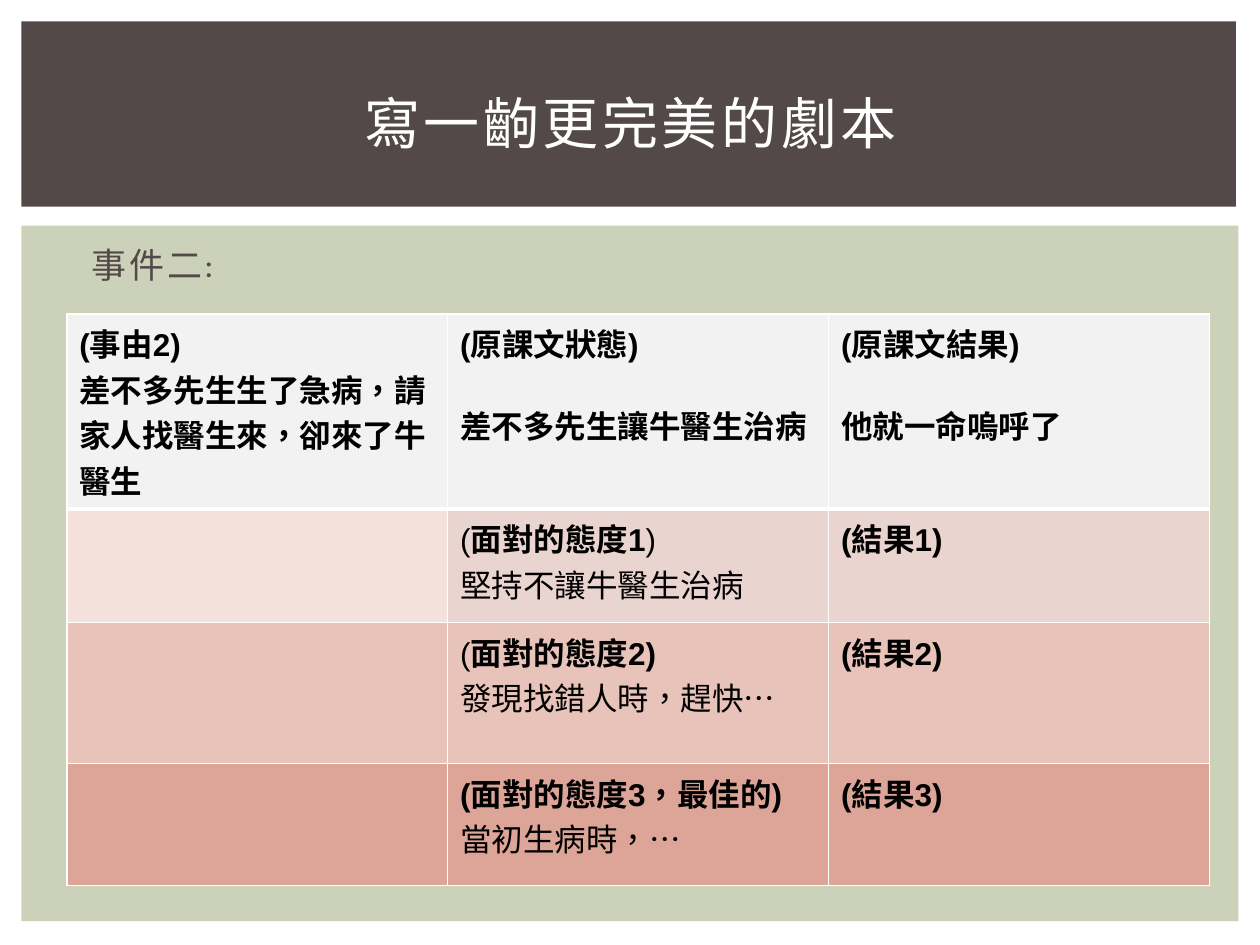
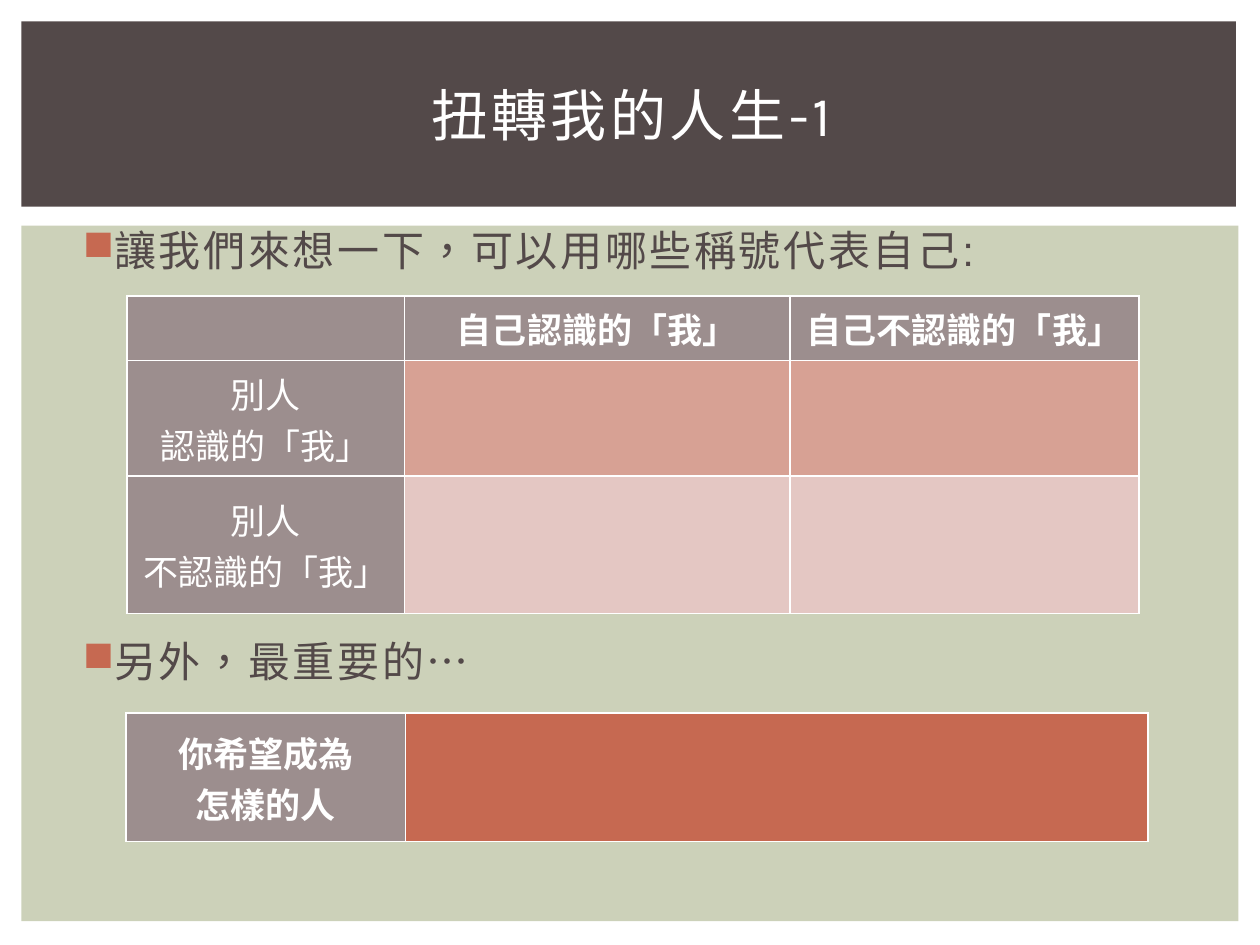
import lxml.etree
import pptx
import pptx.dml.color
import pptx.enum.shapes
import pptx.enum.text
import pptx.oxml.ns
import pptx.util

RGBColor = pptx.dml.color.RGBColor
Pt = pptx.util.Pt
qn = pptx.oxml.ns.qn
ALIGN = pptx.enum.text.PP_ALIGN
ANCHOR = pptx.enum.text.MSO_ANCHOR

WIDTH, HEIGHT = pptx.util.Inches(10), pptx.util.Inches(7.5)
COLUMN, ROW = WIDTH / 100, HEIGHT / 75  # the page grid

WHITE = RGBColor(0xFF, 0xFF, 0xFF)
BLACK = RGBColor(0x00, 0x00, 0x00)
BROWN = RGBColor(0x53, 0x49, 0x49)
SAGE = RGBColor(0xCC, 0xD1, 0xB9)
RUST = RGBColor(0xC6, 0x69, 0x51)
TAUPE = RGBColor(0x9C, 0x8E, 0x8E)
PALE_GREY = RGBColor(0xF2, 0xF2, 0xF2)
CREAM = RGBColor(0xF4, 0xE1, 0xDC)
BLUSH = RGBColor(0xEA, 0xD4, 0xD0)
PEACH = RGBColor(0xE8, 0xC3, 0xB9)
SALMON = RGBColor(0xDD, 0xA5, 0x97)
CLAY = RGBColor(0xD7, 0xA1, 0x94)
ROSE = RGBColor(0xE4, 0xC7, 0xC3)

TITLE_FONT, BODY_FONT, CJK_FONT = "Karla", "Arial", "Noto Sans CJK JP"

BODY_BAND = (1.7, 17.9, 96.6, 55.2)
TITLE_BAND = (1.7, 1.7, 96.4, 14.7)


def place(box):
    """Turn a box in grid units into slide lengths."""
    left, top, width, height = box
    return [round(value) for value in
            (left * COLUMN, top * ROW, width * COLUMN, height * ROW)]


def inside(box, left, top, width, height):
    """Give a box whose offset is counted from the corner of another."""
    return box[0] + left, box[1] + top, width, height


def write(frame, lines, size=18, font=BODY_FONT, color=BLACK, bold=False,
          tracking=0, align=ALIGN.LEFT, anchor=ANCHOR.TOP, indent=0,
          bullet=None, line_spacing=None, gap=0):
    """Write one paragraph per line; a line is a string or (text, bold) parts."""
    frame.word_wrap = True
    frame.vertical_anchor = anchor
    for number, line in enumerate(lines):
        para = frame.paragraphs[0] if number == 0 else frame.add_paragraph()
        para.alignment = align
        para.line_spacing = line_spacing
        para.space_before = Pt(gap if number else 0)
        properties = para._p.get_or_add_pPr()
        properties.set("marL", str(round(indent * COLUMN)))
        if bullet:
            properties.set("indent", str(round(-2.5 * COLUMN)))
            color_node = lxml.etree.SubElement(properties, qn("a:buClr"))
            lxml.etree.SubElement(color_node, qn("a:srgbClr"), val=str(bullet))
            lxml.etree.SubElement(properties, qn("a:buChar"), char="■")
        parts = [(line, bold)] if isinstance(line, str) else line
        for text, heavy in parts:
            span = para.add_run()
            span.text = text
            span.font.size = Pt(size)
            span.font.name = font
            span.font.bold = heavy
            span.font.color.rgb = color
            format_node = span._r.get_or_add_rPr()
            format_node.set("lang", "zh-TW")
            format_node.set("spc", str(round(tracking * 100)))
            latin = format_node.find(qn("a:latin"))
            latin.addnext(latin.makeelement(qn("a:ea"), {"typeface": CJK_FONT}))


def add_text(page, box, lines, **style):
    write(page.shapes.add_textbox(*place(box)).text_frame, lines, **style)


def add_band(page, box, color):
    band = page.shapes.add_shape(
        pptx.enum.shapes.MSO_SHAPE.RECTANGLE, *place(box))
    band.shadow.inherit = False
    band.fill.solid()
    band.fill.fore_color.rgb = color
    band.line.fill.background()


def add_page(deck, title, title_box):
    """Add a page with the two shared bands and a title."""
    page = deck.slides.add_slide(deck.slide_layouts[6])
    add_band(page, BODY_BAND, SAGE)
    add_band(page, TITLE_BAND, BROWN)
    add_text(page, inside(TITLE_BAND, *title_box), [title], size=32,
             font=TITLE_FONT, color=WHITE, tracking=2, align=ALIGN.CENTER,
             anchor=ANCHOR.MIDDLE)
    return page


def set_borders(cell, top=1, bottom=1):
    properties = cell._tc.get_or_add_tcPr()
    widths = {"lnL": 1, "lnR": 1, "lnT": top, "lnB": bottom}
    for position, (side, width) in enumerate(widths.items()):
        border = properties.makeelement(qn("a:" + side), {"w": str(Pt(width))})
        fill = lxml.etree.SubElement(border, qn("a:solidFill"))
        lxml.etree.SubElement(fill, qn("a:srgbClr"), val=str(WHITE))
        properties.insert(position, border)


def add_grid(page, corner, widths, heights, fills):
    """Add a plain white-ruled table, filled cell by cell."""
    box = (*corner, sum(widths), sum(heights))
    table = page.shapes.add_table(
        len(heights), len(widths), *place(box)).table
    table.first_row = table.horz_banding = False
    for column, width in zip(table.columns, widths):
        column.width = round(width * COLUMN)
    for row, height in zip(table.rows, heights):
        row.height = round(height * ROW)
    for row, colors in zip(table.rows, fills):
        for cell, color in zip(row.cells, colors):
            cell.fill.solid()
            cell.fill.fore_color.rgb = color
    return table


def write_cell(cell, lines, anchor=ANCHOR.TOP, **style):
    write(cell.text_frame, lines, **style)
    cell.vertical_anchor = anchor


def add_script_table(page, corner):
    fills = [[PALE_GREY] * 3, [CREAM, BLUSH, BLUSH], [PEACH] * 3, [SALMON] * 3]
    table = add_grid(page, corner, [30.23] * 3, [15.5, 9, 11.2, 9.7], fills)
    headers = [
        (["(事由2)", "差不多先生生了急病，請家人找醫生來，卻來了牛醫生"], 0),
        (["(原課文狀態)", "差不多先生讓牛醫生治病"], 21),
        (["(原課文結果)", "他就一命嗚呼了"], 21),
    ]
    for column, (lines, gap) in enumerate(headers):
        write_cell(table.cell(0, column), lines, bold=True, gap=gap)
    attitudes = [
        ([("(", False), ("面對的態度1", True), (")", False)], "堅持不讓牛醫生治病"),
        ([("(", False), ("面對的態度2)", True)], "發現找錯人時，趕快…"),
        ([("(面對的態度3，最佳的)", True)], "當初生病時，…"),
    ]
    for number, lines in enumerate(attitudes, start=1):
        write_cell(table.cell(number, 1), lines)
        write_cell(table.cell(number, 2), [f"(結果{number})"], bold=True)
    for number, row in enumerate(table.rows):
        for cell in row.cells:
            set_borders(cell, top=3 if number == 1 else 1,
                        bottom=3 if number == 0 else 1)


def add_label_table(page, corner, widths, heights, fills, labels):
    """Add a table whose labels map (row, column) to lines and weight."""
    table = add_grid(page, corner, widths, heights, fills)
    for position, (lines, bold) in labels.items():
        write_cell(table.cell(*position), lines, size=20, font=CJK_FONT,
                   color=WHITE, bold=bold, align=ALIGN.CENTER,
                   anchor=ANCHOR.MIDDLE)
    for cell in table.iter_cells():
        set_borders(cell)


def build_script_page(deck):
    page = add_page(deck, "寫一齣更完美的劇本", (2.5, 2.2, 91.7, 11.5))
    add_text(page, inside(BODY_BAND, 2.5, 0.9, 91.9, 6), ["事件二:"], size=20,
             font=TITLE_FONT, color=BROWN, tracking=1.5, indent=2.1)
    add_script_table(page, inside(BODY_BAND, 3.6, 7, 0, 0)[:2])


def build_self_page(deck):
    page = add_page(deck, "扭轉我的人生-1", (3.4, 1.1, 90, 12.5))
    add_text(page, inside(BODY_BAND, 3.4, -0.1, 90, 55.1),
             ["讓我們來想一下，可以用哪些稱號代表自己:", "另外，最重要的…"],
             size=24, color=BROWN, tracking=1.5, indent=3, bullet=RUST,
             line_spacing=0.9, gap=209)
    add_label_table(
        page, inside(BODY_BAND, 8.4, 5.6, 0, 0)[:2],
        [22, 30.6, 27.7], [5.1, 9.2, 10.9],
        [[TAUPE] * 3, [TAUPE, CLAY, CLAY], [TAUPE, ROSE, ROSE]],
        {(0, 1): (["自己認識的「我」"], True),
         (0, 2): (["自己不認識的「我」"], True),
         (1, 0): (["別人", "認識的「我」"], False),
         (2, 0): (["別人", "不認識的「我」"], False)})
    add_label_table(
        page, inside(BODY_BAND, 8.3, 38.7, 0, 0)[:2],
        [22.2, 58.9], [10.2], [[TAUPE, RUST]],
        {(0, 0): (["你希望成為", "怎樣的人"], True)})


def main():
    deck = pptx.Presentation()
    deck.slide_width, deck.slide_height = WIDTH, HEIGHT
    build_script_page(deck)
    build_self_page(deck)
    deck.save("out.pptx")


if __name__ == "__main__":
    main()
